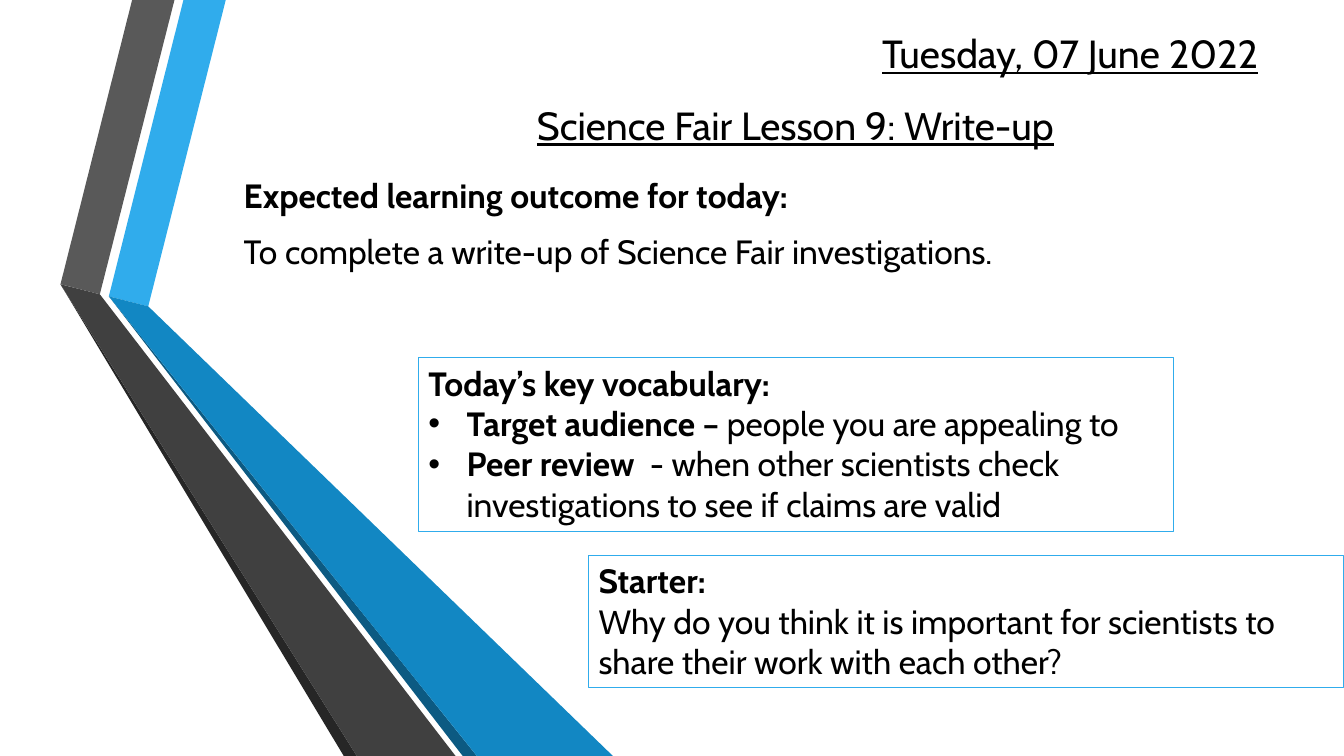
from dataclasses import dataclass

from lxml import etree
from pptx import Presentation
from pptx import util as u
from pptx.dml.color import RGBColor
from pptx.enum import shapes, text
from pptx.oxml.ns import qn


@dataclass(frozen=True)
class Theme:
    font: str = "Cabin"
    ink: str = "000000"
    outline: str = "30ACEC"
    heading: int = 28
    body: int = 24
    line: float = 0.75
    indent: float = 0.38


@dataclass(frozen=True)
class Box:
    left: int
    top: int
    width: int
    height: int

    def point(self, x, y):
        """Point at x and y percent of this box."""
        return (self.left + round(self.width * x / 100),
                self.top + round(self.height * y / 100))

    def inner(self, x, y, width, height):
        """Inner box given in percent of this one."""
        left, top = self.point(x, y)
        right, bottom = self.point(x + width, y + height)
        return Box(left, top, right - left, bottom - top)

    def frame(self):
        return self.left, self.top, self.width, self.height


THEME = Theme()

# Corners of the folded ribbons, in percent of the slide
GREY_FOLD, GREY_INNER = (4.5, 37.6), (7.43, 38.93)
BLUE_FOLD, BLUE_INNER = (8.1, 39.2), (11.03, 40.53)
GREY_EDGE, BLUE_EDGE = (26.55, 100), (35.48, 100)
RIBBONS = [
    ("30ACEC", [BLUE_FOLD, BLUE_INNER, (16.8, 0), (13.65, 0)]),
    ("595959", [GREY_INNER, (12.98, 0), (9.83, 0), GREY_FOLD]),
    ("262626", [GREY_FOLD, (25.58, 100), GREY_EDGE]),
    ("0C5A82", [BLUE_FOLD, (34.43, 100), BLUE_EDGE]),
    ("1287C3", [BLUE_FOLD, BLUE_EDGE, (45.6, 100), BLUE_INNER]),
    ("404040", [GREY_FOLD, GREY_EDGE, (33.9, 100), (7.95, 40.13), GREY_INNER]),
]


def add_ribbons(slide, box):
    for colour, corners in RIBBONS:
        points = [box.point(*corner) for corner in corners]
        builder = slide.shapes.build_freeform(*points[0], scale=1.0)
        builder.add_line_segments(points[1:], close=True)
        ribbon = builder.convert_to_shape()
        ribbon.shadow.inherit = False
        ribbon.fill.solid()
        ribbon.fill.fore_color.rgb = RGBColor.from_string(colour)
        ribbon.line.fill.background()


def add_run(paragraph, words, size, bold=False, underline=False):
    run = paragraph.add_run()
    run.text = words
    run.font.name = THEME.font
    run.font.size = u.Pt(size)
    run.font.bold = bold
    run.font.underline = underline
    run.font.color.rgb = RGBColor.from_string(THEME.ink)


def add_bullet(paragraph):
    props = paragraph._p.get_or_add_pPr()
    props.set("marL", str(u.Inches(THEME.indent)))
    props.set("indent", str(-u.Inches(THEME.indent)))
    etree.SubElement(props, qn("a:buFont")).set("typeface", "Arial")
    etree.SubElement(props, qn("a:buChar")).set("char", "•")


def add_heading(slide, box, words, align):
    heading = slide.shapes.add_textbox(*box.frame()).text_frame
    heading.word_wrap = True
    heading.vertical_anchor = text.MSO_ANCHOR.BOTTOM
    paragraph = heading.paragraphs[0]
    paragraph.alignment = align
    add_run(paragraph, words, THEME.heading, underline=True)


def fill_body(frame, paragraphs, before=0, after=0):
    """Each paragraph is (bulleted, [(words, bold), ...])."""
    frame.word_wrap = True
    frame.vertical_anchor = text.MSO_ANCHOR.TOP
    for index, (bulleted, runs) in enumerate(paragraphs):
        paragraph = frame.add_paragraph() if index else frame.paragraphs[0]
        paragraph.alignment = text.PP_ALIGN.LEFT
        paragraph.space_before = u.Pt(before)
        paragraph.space_after = u.Pt(after)
        if bulleted:
            add_bullet(paragraph)
        for words, bold in runs:
            add_run(paragraph, words, THEME.body, bold)


def add_outcome(slide, box):
    outcome = slide.shapes.add_textbox(*box.frame())
    fill_body(outcome.text_frame, [
        (False, [("Expected learning outcome for today:", True)]),
        (False, [("To complete a write-up of Science Fair investigations.", False)]),
    ], before=4.8, after=6)


def add_panel(slide, box, paragraphs):
    panel = slide.shapes.add_shape(shapes.MSO_SHAPE.RECTANGLE, *box.frame())
    panel.shadow.inherit = False
    panel.fill.background()
    panel.line.color.rgb = RGBColor.from_string(THEME.outline)
    panel.line.width = u.Pt(THEME.line)
    fill_body(panel.text_frame, paragraphs)


def main():
    prs = Presentation()
    prs.slide_width, prs.slide_height = u.Inches(13.33), u.Inches(7.5)
    slide = prs.slides.add_slide(prs.slide_layouts[6])
    page = Box(0, 0, prs.slide_width, prs.slide_height)

    add_ribbons(slide, page)

    # Date and lesson title
    add_heading(slide, page.inner(24, 3.6, 70.35, 7.2),
                "Tuesday, 07 June 2022", text.PP_ALIGN.RIGHT)
    add_heading(slide, page.inner(24, 13.07, 70.35, 7.2),
                "Science Fair Lesson 9: Write-up", text.PP_ALIGN.CENTER)

    add_outcome(slide, page.inner(17.4, 22.53, 79.65, 20.27))

    # Vocabulary and starter panels
    add_panel(slide, page.inner(31.13, 47.33, 56.2, 22.93), [
        (False, [("Today’s key vocabulary:", True)]),
        (True, [("Target audience – ", True),
                ("people you are appealing to", False)]),
        (True, [("Peer review ", True),
                (" - when other scientists check investigations "
                 "to see if claims are valid", False)]),
    ])
    add_panel(slide, page.inner(43.8, 73.47, 56.2, 17.47), [
        (False, [("Starter:", True)]),
        (False, [("Why do you think it is important for scientists to "
                  "share their work with each other?", False)]),
    ])
    prs.save("out.pptx")


if __name__ == "__main__":
    main()
